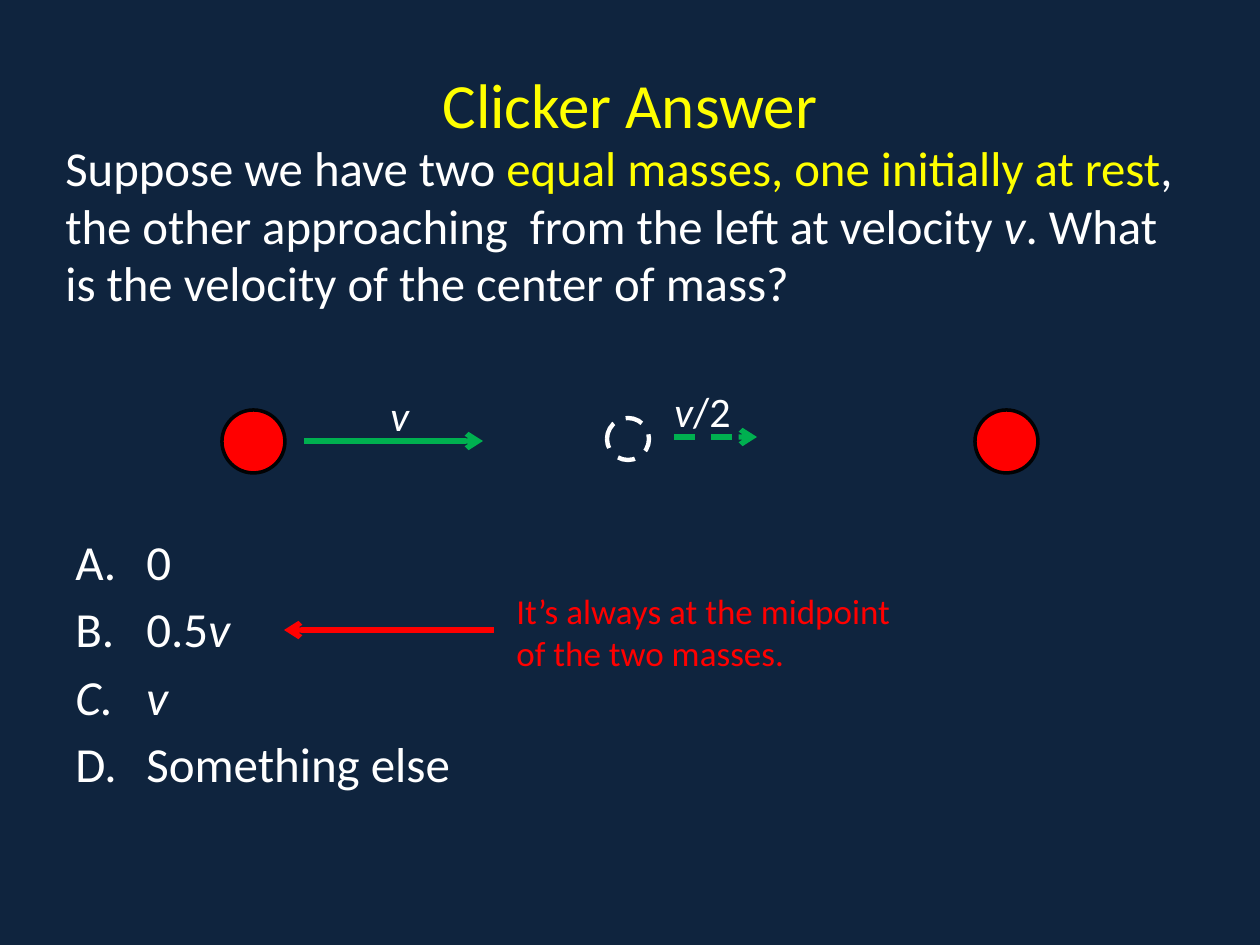
import dataclasses
import pptx
import pptx.dml.color
import pptx.enum.dml
import pptx.enum.shapes
import pptx.enum.text
import pptx.oxml.ns
import pptx.util
from lxml import etree

SHAPES = pptx.enum.shapes.MSO_SHAPE
ALIGN = pptx.enum.text.PP_ALIGN
ANCHOR = pptx.enum.text.MSO_ANCHOR
DASH = pptx.enum.dml.MSO_LINE.DASH


@dataclasses.dataclass(frozen=True)
class Theme:
    font: str = "Calibri"
    background: str = "0F243E"
    text: str = "FFFFFF"
    accent: str = "FFFF00"
    mass: str = "FF0000"
    outline: str = "010203"
    velocity: str = "00B050"
    title_size: float = 36
    question_size: float = 27.9
    answer_size: float = 28
    label_size: float = 24
    note_size: float = 20


def px(length):
    return pptx.util.Emu(round(length * 914400 / 126))


def rgb(value):
    return pptx.dml.color.RGBColor.from_string(value)


def add_xml(parent, tag, **attributes):
    return etree.SubElement(parent, pptx.oxml.ns.qn(tag), attributes)


class SlideBuilder:
    def __init__(self, deck, theme):
        self.theme = theme
        self.page = deck.slides.add_slide(deck.slide_layouts[6])
        self.page.background.fill.solid()
        self.page.background.fill.fore_color.rgb = rgb(theme.background)

    def text_box(self, left, top, width, height, anchor=ANCHOR.TOP):
        box = self.page.shapes.add_textbox(px(left), px(top), px(width), px(height))
        box.text_frame.word_wrap = True
        box.text_frame.vertical_anchor = anchor
        return box.text_frame

    def paragraph(self, frame, spans, size, color=None, indent=0, hanging=0,
                  numbering=None, **formats):
        """Each span is a text with its own font values: color, italic."""
        para = frame.paragraphs[0]
        if para.runs:
            para = frame.add_paragraph()
        for name, value in formats.items():
            setattr(para, name, value)
        properties = para._p.get_or_add_pPr()
        properties.set("marL", str(px(indent)))
        properties.set("indent", str(px(-hanging)))
        if numbering:
            add_xml(properties, "a:buFont", typeface="+mj-lt")
            add_xml(properties, "a:buAutoNum", type=numbering)
        for text, own in spans:
            span = para.add_run()
            span.text = text
            values = {"name": self.theme.font, "size": pptx.util.Pt(size),
                      "italic": own.get("italic", False)}
            for name, value in values.items():
                setattr(span.font, name, value)
            span.font.color.rgb = rgb(own.get("color", color or self.theme.text))

    def stroke(self, line, color, width, dash):
        line.color.rgb = rgb(color)
        line.width = pptx.util.Pt(width)
        if dash:
            line.dash_style = dash

    def circle(self, left, top, size, color, width, fill=None, dash=None):
        shape = self.page.shapes.add_shape(
            SHAPES.OVAL, px(left), px(top), px(size), px(size))
        shape.shadow.inherit = False
        if fill:
            shape.fill.solid()
            shape.fill.fore_color.rgb = rgb(fill)
        else:
            shape.fill.background()
        self.stroke(shape.line, color, width, dash)

    def arrow(self, start, end, y, color, dash=None):
        connector = self.page.shapes.add_connector(
            pptx.enum.shapes.MSO_CONNECTOR.STRAIGHT, px(start), px(y), px(end), px(y))
        self.stroke(connector.line, color, 3, dash)
        add_xml(connector.line._get_or_add_ln(), "a:tailEnd", type="arrow")
        add_xml(connector._element.spPr, "a:effectLst")


def main():
    deck = pptx.Presentation()
    deck.slide_width, deck.slide_height = px(1260), px(945)
    theme = Theme()
    slide = SlideBuilder(deck, theme)
    italic = {"italic": True}

    # Heading and question
    frame = slide.text_box(53, 21, 1134, 336, ANCHOR.MIDDLE)
    slide.paragraph(frame, [("Clicker Answer", {})], theme.title_size,
                    theme.accent, indent=20, alignment=ALIGN.CENTER)
    question = [
        ("Suppose we have two ", {}),
        ("equal masses, one initially at rest", {"color": theme.accent}),
        (", the other approaching  from the left at velocity ", {}),
        ("v", italic),
        (". What is the velocity of the center of mass?", {}),
    ]
    slide.paragraph(frame, question, theme.question_size, line_spacing=0.98)

    # Answers
    frame = slide.text_box(63, 525, 1134, 368)
    answers = [
        [("0", {})],
        [("0.5", {}), ("v", italic)],
        [("v", italic)],
        [("Something else", {})],
    ]
    for answer in answers:
        slide.paragraph(frame, answer, theme.answer_size, indent=71, hanging=71,
                        numbering="alphaUcPeriod", space_before=pptx.util.Pt(5))

    # Two masses and their center of mass
    for left in (222, 975):
        slide.circle(left, 410, 63, theme.outline, 2, fill=theme.mass)
    slide.circle(607, 418, 42, theme.text, 2.5, dash=DASH)

    # Velocities
    slide.arrow(304, 483, 441, theme.velocity)
    slide.arrow(674, 757, 437, theme.velocity, dash=DASH)
    labels = [
        (378, 383, 63, [("v", italic)]),
        (662, 379, 87, [("v", italic), ("/2", {})]),
    ]
    for left, top, width, spans in labels:
        frame = slide.text_box(left, top, width, 63)
        slide.paragraph(frame, spans, theme.label_size)

    # Explanation of the right answer
    slide.arrow(494, 284, 630, theme.mass)
    frame = slide.text_box(504, 583, 431, 97)
    note = [("It’s always at the midpoint of the two masses.", {})]
    slide.paragraph(frame, note, theme.note_size, theme.mass)

    deck.save("out.pptx")


if __name__ == "__main__":
    main()
